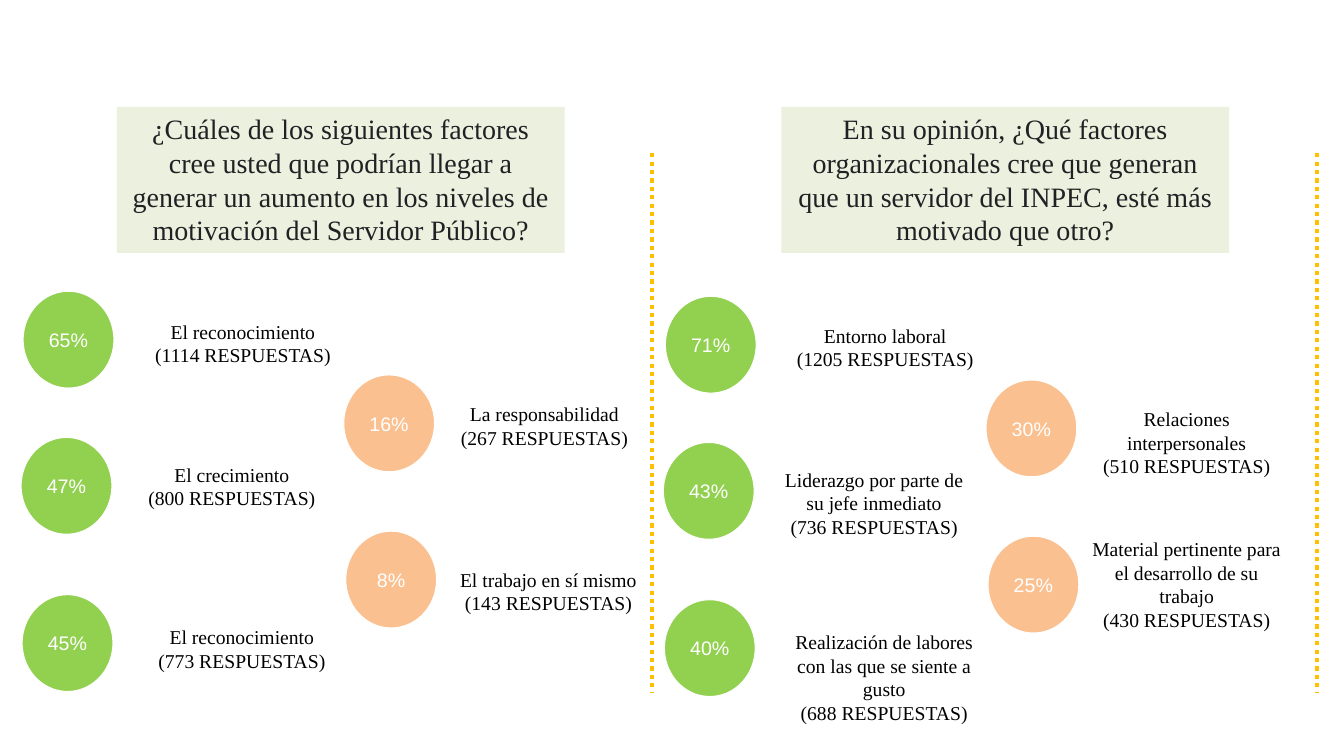
from lxml import etree
from pptx import Presentation
from pptx.dml.color import RGBColor
from pptx.enum.dml import MSO_LINE
from pptx.enum.shapes import MSO_CONNECTOR, MSO_SHAPE
from pptx.enum.text import MSO_ANCHOR, PP_ALIGN
from pptx.oxml.ns import qn
from pptx.util import Pt

PX = 9144  # 100 px to the inch
RECTANGLE, OVAL = MSO_SHAPE.RECTANGLE, MSO_SHAPE.OVAL
STRAIGHT = MSO_CONNECTOR.STRAIGHT
DOTTED = MSO_LINE.ROUND_DOT
TOP, MIDDLE = MSO_ANCHOR.TOP, MSO_ANCHOR.MIDDLE
CENTER = PP_ALIGN.CENTER

SERIF, SANS = "Times New Roman", "Arial"
GREEN, PEACH, PALE_GREEN = "92D050", "FAC090", "EBF1DE"
AMBER, WHITE, BLACK, CHARCOAL = "FFC000", "FFFFFF", "000000", "202124"

LABEL_WIDTH = 218
LABEL_BASE, LABEL_LINE = 20, 23.5

# Circles zigzag down each panel: left, top, fill
CIRCLES = [(23, 289, GREEN), (341, 372, PEACH), (21, 434, GREEN),
           (343, 527, PEACH), (22, 590, GREEN)]

# Each panel: circle offset, question left, divider x, question,
# answers as percentage, label left, label top, lines, factor, count
PANELS = [
    ((0, 0), 116, 647,
     "¿Cuáles de los siguientes factores cree usted que podrían llegar a "
     "generar un aumento en los niveles de motivación del Servidor Público?",
     [("65%", 132, 307, 2, "El reconocimiento", 1114),
      ("16%", 431, 389, 2, "La responsabilidad", 267),
      ("47%", 121, 449, 2, "El crecimiento", 800),
      ("8%", 435, 553, 2, "El trabajo en sí mismo", 143),
      ("45%", 131, 610, 2, "El reconocimiento", 773)]),
    ((637, 5), 775, 1306,
     "En su opinión, ¿Qué factores organizacionales cree que generan "
     "que un servidor del INPEC, esté más motivado que otro?",
     [("71%", 769, 311, 2, "Entorno laboral", 1205),
      ("30%", 1068, 394, 3, "Relaciones interpersonales", 510),
      ("43%", 758, 454, 3, "Liderazgo por parte de su jefe inmediato", 736),
      ("25%", 1068, 523, 4,
       "Material pertinente para el desarrollo de su trabajo", 430),
      ("40%", 768, 615, 4,
       "Realización de labores con las que se siente a gusto", 688)]),
]


def px(length):
    return round(length * PX)


def color(value):
    return RGBColor.from_string(value)


def write(box, lines, font, size, ink, anchor=TOP, margin=10):
    frame = box.text_frame
    frame.word_wrap = True
    frame.vertical_anchor = anchor
    frame.margin_left = frame.margin_right = px(10)
    frame.margin_top = frame.margin_bottom = px(margin)
    for index, line in enumerate(lines):
        para = frame.add_paragraph() if index else frame.paragraphs[0]
        para.alignment = CENTER
        span = para.add_run()
        span.text = line
        span.font.name = font
        span.font.size = Pt(size)
        span.font.color.rgb = color(ink)


def add_filled(page, kind, left, top, width, height, fill):
    shape = page.shapes.add_shape(kind, px(left), px(top), px(width), px(height))
    shape.shadow.inherit = False
    shape.fill.solid()
    shape.fill.fore_color.rgb = color(fill)
    return shape


def add_question(page, left, question):
    box = add_filled(page, RECTANGLE, left, 106, 444, 145, PALE_GREEN)
    box.line.fill.background()
    write(box, [question], SERIF, 20, CHARCOAL, margin=5)


def add_circle(page, left, top, fill, percentage):
    circle = add_filled(page, OVAL, left, top, 90, 96, fill)
    circle.line.color.rgb = color(WHITE)
    circle.line.width = Pt(0.75)
    write(circle, [percentage], SANS, 14, WHITE, MIDDLE)


def add_label(page, left, top, line_count, factor, answers):
    height = LABEL_BASE + LABEL_LINE * line_count
    box = page.shapes.add_textbox(px(left), px(top), px(LABEL_WIDTH), px(height))
    write(box, [factor, f"({answers} RESPUESTAS)"], SERIF, 14, BLACK)


def add_divider(page, x):
    divider = page.shapes.add_connector(STRAIGHT, px(x), px(152), px(x), px(687))
    divider.line.color.rgb = color(AMBER)
    divider.line.width = Pt(3)
    divider.line.dash_style = DOTTED
    etree.SubElement(divider._element.spPr, qn("a:effectLst"))


def main():
    deck = Presentation()
    deck.slide_width, deck.slide_height = px(1333), px(750)
    page = deck.slides.add_slide(deck.slide_layouts[6])

    for (shift_x, shift_y), question_left, divider_x, question, answers in PANELS:
        # Question and dotted divider
        add_question(page, question_left, question)
        add_divider(page, divider_x)
        # Answers
        for (left, top, fill), (percentage, *label) in zip(CIRCLES, answers):
            add_label(page, *label)
            add_circle(page, left + shift_x, top + shift_y, fill, percentage)

    deck.save("out.pptx")


if __name__ == "__main__":
    main()
